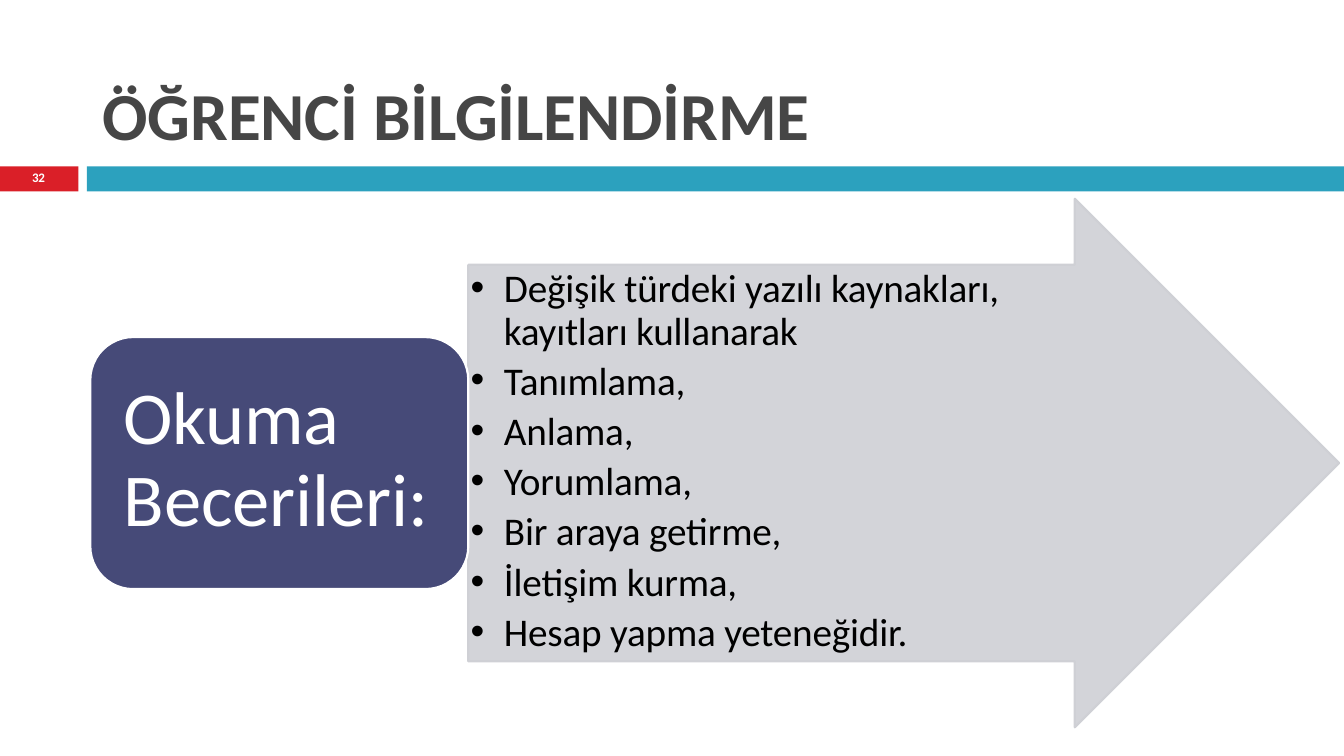
"""Build the slide on reading skills: title band, rounded label and arrow with a list."""
from lxml import etree
from pptx import Presentation
from pptx.dml.color import RGBColor
from pptx.enum.shapes import MSO_SHAPE
from pptx.oxml.ns import qn
from pptx.util import Pt

RECT = MSO_SHAPE.RECTANGLE
ROUNDED = MSO_SHAPE.ROUNDED_RECTANGLE
ARROW = MSO_SHAPE.RIGHT_ARROW
FONT = "Calibri"


def rgb(value):
    return RGBColor.from_string(value)


def add_text(text, left, top, width, height, size, color, bold=False, wrap=True,
             inset=(1.3, 1.4), before=(1.3,), line=None, bullet=None, spacing=-10):
    tf = s.shapes.add_textbox(Pt(left), Pt(top), Pt(width), Pt(height)).text_frame
    tf.word_wrap = wrap
    tf.margin_left, tf.margin_top = Pt(inset[0]), Pt(inset[1])
    tf.margin_right = tf.margin_bottom = 0
    for i, item in enumerate(text.split("\n")):
        p = tf.paragraphs[0] if i == 0 else tf.add_paragraph()
        p.space_before = Pt(before[i])
        if line and i == 0:
            p.line_spacing = Pt(line)
        if bullet:
            pPr = p._p.get_or_add_pPr()
            pPr.set("marL", str(Pt(25.2)))
            pPr.set("indent", str(-Pt(23.8)))
            etree.SubElement(pPr, qn("a:buFont")).set("typeface", "Arial")
            etree.SubElement(pPr, qn("a:buChar")).set("char", bullet)
        r = p.add_run()
        r.text = item
        r.font.name, r.font.size, r.font.bold = FONT, Pt(size), bold
        r.font.color.rgb = rgb(color)
        r.font._element.set("spc", str(spacing))


prs = Presentation()
prs.slide_width, prs.slide_height = Pt(960), Pt(540)
s = prs.slides.add_slide(prs.slide_layouts[6])

shapes = [
    (RECT, 0, 118.8, 56, 18, "DA1F28", None, ()),
    (RECT, 62, 118.8, 898, 18, "2CA1BE", None, ()),
    (ARROW, 334.5, 142, 622, 377.5, "CFD0D5", "CFD0D5", (0.75, 0.5)),
    (ROUNDED, 64.5, 240.8, 270, 180, "464A78", "FFFFFF", (0.17,)),
]
for kind, left, top, width, height, fill, outline, adjustments in shapes:
    sp = s.shapes.add_shape(kind, Pt(left), Pt(top), Pt(width), Pt(height))
    sp.shadow.inherit = False
    sp.fill.solid()
    sp.fill.fore_color.rgb = rgb(fill)
    for i, value in enumerate(adjustments):
        sp.adjustments[i] = value
    if outline:
        sp.line.color.rgb = rgb(outline)
        sp.line.width = Pt(1.56)
    else:
        sp.line.fill.background()
    if kind == ARROW:
        clr = sp._element.spPr.find(qn("a:solidFill")).find(qn("a:srgbClr"))
        etree.SubElement(clr, qn("a:alpha")).set("val", "90000")

skills = """Değişik türdeki yazılı kaynakları,  kayıtları kullanarak
Tanımlama,
Anlama,
Yorumlama,
Bir araya getirme,
İletişim kurma,
Hesap yapma yeteneğidir."""

add_text("ÖĞRENCİ BİLGİLENDİRME", 72, 51.1, 510, 60, 48, "464646", bold=True, wrap=False)
add_text("32", 21.6, 119.5, 12.5, 12.5, 9.3, "FFFFFF", bold=True, wrap=False)
add_text(skills, 334.8, 186.5, 386, 283, 28, "000000", inset=(0, 4.3), line=30.9,
         before=(4.5, 1.6, 2.3, 2.2, 2.4, 2.3, 2.3), bullet="•", spacing=-15)
add_text("Okuma Becerileri:", 87.1, 262, 222, 127, 53.3, "FFFFFF", inset=(1.3, 7.9),
         line=58.5, before=(7.8,), spacing=-15)

prs.save("out.pptx")
